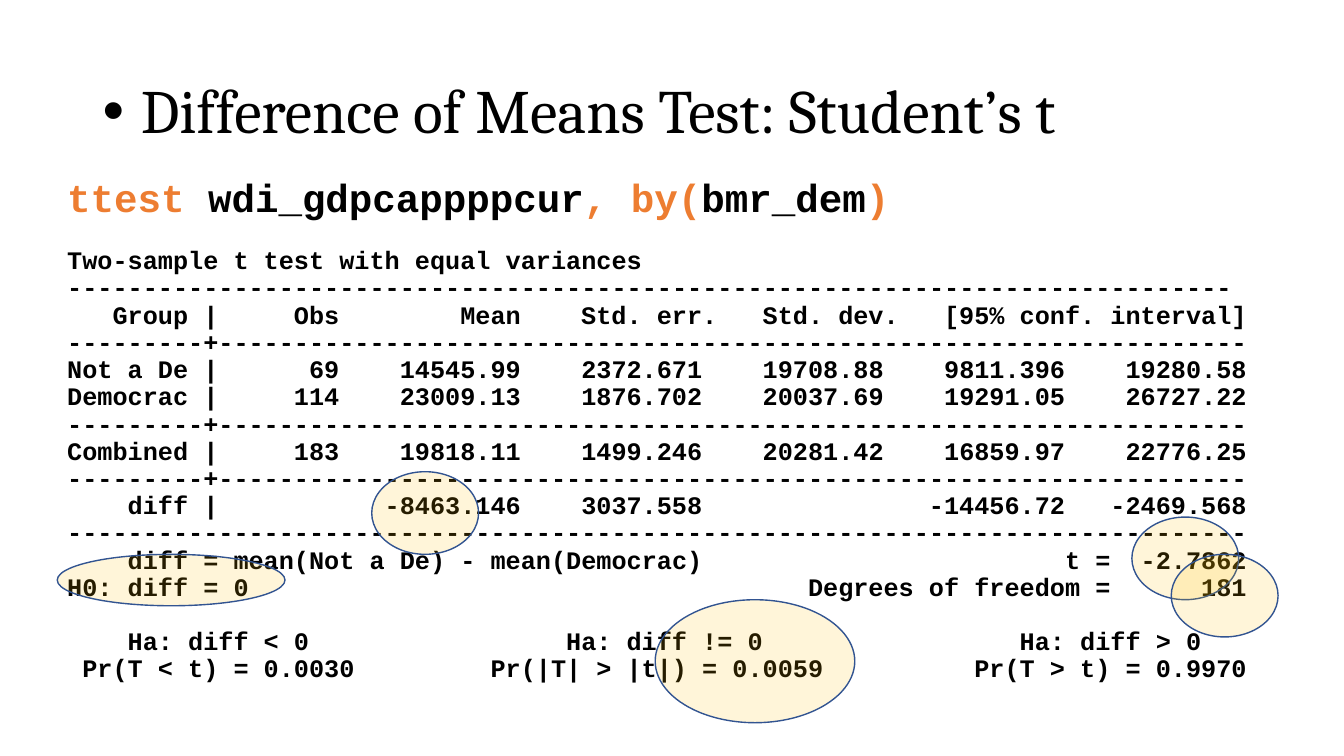
from dataclasses import dataclass

from lxml.etree import SubElement
from pptx import Presentation
from pptx.dml.color import RGBColor
from pptx.enum.shapes import MSO_SHAPE
from pptx.enum.text import MSO_ANCHOR, MSO_AUTO_SIZE, PP_ALIGN
from pptx.oxml.ns import qn
from pptx.util import Inches, Pt

BLACK = RGBColor(0x00, 0x00, 0x00)
ORANGE = RGBColor(0xED, 0x7D, 0x31)
GOLD = RGBColor(0xFF, 0xC0, 0x00)
NAVY = RGBColor(0x32, 0x54, 0x91)
WIDE, HIGH = Pt(960), Pt(540)
CHAR = Pt(10.8)
BLANK = Pt(19.4)


@dataclass
class Box:
    """A frame in percent of the slide's width and height."""
    left: float
    top: float
    width: float
    height: float

    def frame(self) -> tuple[int, int, int, int]:
        """Return the frame in slide units."""
        return (round(WIDE * self.left / 100), round(HIGH * self.top / 100),
                round(WIDE * self.width / 100), round(HIGH * self.height / 100))


@dataclass
class Line:
    """An output line, its tab stops in characters, and a gap above."""
    text: str
    right: tuple[int, ...] = ()
    left: tuple[int, ...] = ()
    gap: int = 0


TITLE = Box(6.88, 5.33, 86.25, 19.33)
BODY = Box(4.25, 22.93, 92.87, 69.73)
MARKS = [
    Box(27.66, 62.4, 7.95, 10.93),
    Box(4.26, 73.33, 16.95, 6.8),
    Box(84.22, 68.4, 7.95, 10.93),
    Box(87.15, 73.33, 7.95, 10.93),
    Box(48.75, 79.33, 14.85, 16.27),
]
CODE = [("ttest ", ORANGE), ("wdi_gdpcappppcur", BLACK), (", by(", ORANGE),
        ("bmr_dem", BLACK), (")", ORANGE)]
HEAD = (10, 18, 30, 43, 55, 78)
DATA = (10, 18, 30, 42, 54, 66, 78)
RULE = Line("-" * 9 + "+" + "-" * 68)
LINES = [
    Line("Two-sample t test with equal variances", gap=BLANK),
    Line("-" * 77),
    Line("\tGroup |\tObs\tMean\tStd. err.\tStd. dev.\t[95% conf. interval]", HEAD),
    RULE,
    Line("\tNot a De |\t69\t14545.99\t2372.671\t19708.88\t9811.396\t19280.58", DATA),
    Line("\tDemocrac |\t114\t23009.13\t1876.702\t20037.69\t19291.05\t26727.22", DATA),
    RULE,
    Line("\tCombined |\t183\t19818.11\t1499.246\t20281.42\t16859.97\t22776.25", DATA),
    RULE,
    Line("\tdiff |\t\t-8463.146\t3037.558\t\t-14456.72\t-2469.568", DATA),
    Line("-" * 78),
    Line("\tdiff = mean(Not a De) - mean(Democrac)\tt =\t-2.7862", (69, 78), (4,)),
    Line("H0: diff = 0\tDegrees of freedom =\t181", (69, 78)),
    Line("\tHa: diff < 0\tHa: diff != 0\tHa: diff > 0", left=(4, 33, 63), gap=BLANK),
    Line("\tPr(T < t) = 0.0030\tPr(|T| > |t|) = 0.0059\tPr(T > t) = 0.9970",
         left=(1, 28, 60)),
]


def place(shape, box: Box) -> None:
    """Move a shape to its box."""
    shape.left, shape.top, shape.width, shape.height = box.frame()


def style(para, face: str, size: int, bold: bool, align) -> None:
    """Set the font and layout of a paragraph."""
    font = para.font
    font.name, font.size, font.bold = face, Pt(size), bold
    font.color.rgb = BLACK
    para.alignment = align
    para.line_spacing = 0.9


def outdent(master) -> None:
    """Clear the first-level body indent of the master, so tab stops hold."""
    for level in master.element.iterfind(f".//{qn('p:bodyStyle')}/{qn('a:lvl1pPr')}"):
        level.attrib.pop("indent", None)
        level.set("marL", "0")


def plain(para, line: Line) -> None:
    """Drop the bullet and set the tab stops and gap."""
    props = para._p.get_or_add_pPr()
    SubElement(props, qn("a:buNone"))
    stops = [(col, "r") for col in line.right] + [(col, "l") for col in line.left]
    if stops:
        tabs = SubElement(props, qn("a:tabLst"))
        for col, side in sorted(stops):
            SubElement(tabs, qn("a:tab"), pos=str(col * CHAR), algn=side)
    para.space_before = line.gap


def add_title(shape) -> None:
    """Fill the bulleted title."""
    place(shape, TITLE)
    frame = shape.text_frame
    frame.text = "Difference of Means Test: Student’s t"
    frame.vertical_anchor = MSO_ANCHOR.MIDDLE
    frame.auto_size = MSO_AUTO_SIZE.NONE
    para = frame.paragraphs[0]
    props = para._p.get_or_add_pPr()
    props.set("marL", str(Inches(0.38)))
    props.set("indent", str(-Inches(0.38)))
    SubElement(props, qn("a:buFont"), typeface="Arial")
    SubElement(props, qn("a:buChar"), char="•")
    style(para, "Cambria", 44, False, PP_ALIGN.LEFT)


def add_body(shape) -> None:
    """Fill the command and its output."""
    place(shape, BODY)
    frame = shape.text_frame
    frame.word_wrap = True
    frame.auto_size = MSO_AUTO_SIZE.NONE
    para = frame.paragraphs[0]
    plain(para, Line(""))
    style(para, "Courier New", 28, True, PP_ALIGN.JUSTIFY)
    for text, color in CODE:
        run = para.add_run()
        run.text = text
        run.font.color.rgb = color
    for line in LINES:
        para = frame.add_paragraph()
        para.text = line.text
        plain(para, line)
        style(para, "Courier New", 18, True, PP_ALIGN.JUSTIFY)


def add_mark(shapes, box: Box) -> None:
    """Draw a sheer ellipse over a result."""
    mark = shapes.add_shape(MSO_SHAPE.OVAL, *box.frame())
    mark.shadow.inherit = False
    mark.fill.solid()
    mark.fill.fore_color.rgb = GOLD
    tint = mark.fill._xPr.find(qn("a:solidFill"))[0]
    SubElement(tint, qn("a:alpha"), val="15000")
    mark.line.color.rgb = NAVY
    mark.line.width = Pt(1)


def main() -> None:
    """Build and save the slide."""
    deck = Presentation()
    deck.slide_width, deck.slide_height = WIDE, HIGH
    outdent(deck.slide_master)
    slide = deck.slides.add_slide(deck.slide_layouts[1])
    add_title(slide.shapes.title)
    add_body(slide.placeholders[1])
    for box in MARKS:
        add_mark(slide.shapes, box)
    deck.save("out.pptx")


if __name__ == "__main__":
    main()
